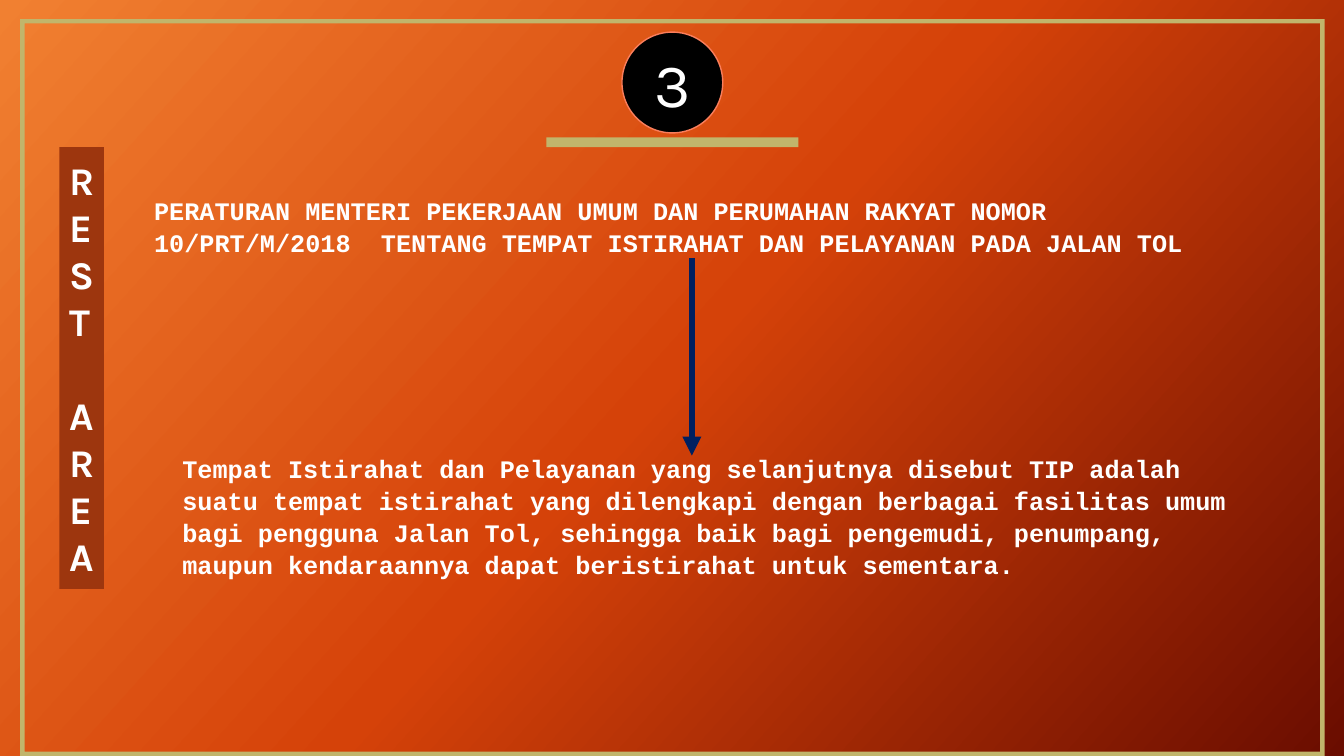
from lxml import etree
from pptx import Presentation
from pptx.dml.color import RGBColor
from pptx.enum.shapes import MSO_CONNECTOR, MSO_SHAPE
from pptx.enum.text import MSO_ANCHOR, MSO_AUTO_SIZE, PP_ALIGN
from pptx.oxml.ns import qn
from pptx.util import Cm, Pt

FRAME, RECTANGLE, OVAL = MSO_SHAPE.FRAME, MSO_SHAPE.RECTANGLE, MSO_SHAPE.OVAL
STRAIGHT = MSO_CONNECTOR.STRAIGHT
TOP, MIDDLE = MSO_ANCHOR.TOP, MSO_ANCHOR.MIDDLE
LEFT, CENTER = PP_ALIGN.LEFT, PP_ALIGN.CENTER
NO_AUTOFIT = MSO_AUTO_SIZE.NONE

COLORS = {
    "orange": "F18031",
    "red": "D54209",
    "maroon": "6A0D00",
    "gold": "C1B56B",
    "black": "000000",
    "coral": "FA7E5C",
    "white": "FFFFFF",
    "navy": "002060",
    "rust": "9D360E",
}
HEADING_FONT, TEXT_FONT = "Karla", "Courier New"
REGULATION = (
    "PERATURAN MENTERI PEKERJAAN UMUM DAN PERUMAHAN RAKYAT NOMOR "
    "10/PRT/M/2018  TENTANG TEMPAT ISTIRAHAT DAN PELAYANAN PADA JALAN TOL"
)
DEFINITION = (
    "Tempat Istirahat dan Pelayanan yang selanjutnya disebut TIP adalah "
    "suatu tempat istirahat yang dilengkapi dengan berbagai fasilitas umum "
    "bagi pengguna Jalan Tol, sehingga baik bagi pengemudi, penumpang, "
    "maupun kendaraannya dapat beristirahat untuk sementara."
)


def color(name):
    """Return the named palette colour."""
    return RGBColor.from_string(COLORS[name])


def paint_background(slide):
    """Fill the slide with a diagonal three-colour gradient."""
    fill = slide.background.fill
    fill.gradient()
    fill.gradient_angle = 318
    stop_list = slide.background._cSld.find(".//" + qn("a:gsLst"))
    for stop in list(stop_list):
        stop_list.remove(stop)
    for position, name in ((0, "orange"), (50, "red"), (100, "maroon")):
        stop = etree.SubElement(stop_list, qn("a:gs"), pos=str(position * 1000))
        etree.SubElement(stop, qn("a:srgbClr"), val=COLORS[name])


def add_block(slide, kind, box, fill):
    """Add a flat, unlined preset shape in the given box."""
    shape = slide.shapes.add_shape(kind, *map(Cm, box))
    shape.shadow.inherit = False
    shape.fill.solid()
    shape.fill.fore_color.rgb = color(fill)
    shape.line.fill.background()
    return shape


def format_paragraph(paragraph, font, size, bold, alignment):
    """Set the alignment and white font of a paragraph."""
    paragraph.alignment = alignment
    paragraph.font.name = font
    paragraph.font.size = Pt(size)
    paragraph.font.bold = bold
    paragraph.font.color.rgb = color("white")


def add_number_badge(slide, box, number):
    """Draw the numbered circle over a gold bar."""
    left, top, width, height = box
    diameter = 2.54
    add_block(slide, RECTANGLE, (left, top + height - 0.25, width, 0.25), "gold")
    circle_left = left + (width - diameter) / 2
    circle = add_block(slide, OVAL, (circle_left, top, diameter, diameter), "black")
    circle.line.color.rgb = color("coral")
    circle.line.width = Pt(1)
    frame = circle.text_frame
    frame.text = number
    frame.vertical_anchor = MIDDLE
    format_paragraph(frame.paragraphs[0], HEADING_FONT, 44, False, CENTER)


def add_side_label(slide, box, words):
    """Stack the letters of the words in a narrow column."""
    label = add_block(slide, RECTANGLE, box, "rust")
    frame = label.text_frame
    frame.word_wrap = True
    frame.vertical_anchor = MIDDLE
    frame.text = "\n".join(words)
    for index, paragraph in enumerate(frame.paragraphs):
        format_paragraph(paragraph, HEADING_FONT, 28, True, LEFT)
        paragraph.space_before = Pt(33.6 if index else 0)


def fill_placeholder(placeholder, box, text):
    """Move a placeholder and give it plain bold text."""
    placeholder.left, placeholder.top, placeholder.width, placeholder.height = map(Cm, box)
    frame = placeholder.text_frame
    frame.text = text
    frame.word_wrap = True
    frame.auto_size = NO_AUTOFIT
    frame.vertical_anchor = TOP
    frame.margin_top = Cm(0.18)
    paragraph = frame.paragraphs[0]
    properties = paragraph._p.get_or_add_pPr()
    properties.set("marL", "0")
    properties.set("indent", "0")
    etree.SubElement(properties, qn("a:buNone"))
    paragraph.space_before = Pt(0)
    paragraph.line_spacing = 1.06
    format_paragraph(paragraph, TEXT_FONT, 18, True, LEFT)


def add_down_arrow(slide, source, length):
    """Draw an arrow down from the bottom middle of the source shape."""
    x = source.left + source.width // 2
    y = source.top + source.height
    arrow = slide.shapes.add_connector(STRAIGHT, x, y, x, y + Cm(length))
    arrow.begin_connect(source, 2)
    arrow.line.color.rgb = color("navy")
    arrow.line.width = Pt(4.5)
    etree.SubElement(arrow.line._get_or_add_ln(), qn("a:tailEnd"), type="triangle")
    etree.SubElement(arrow._element.spPr, qn("a:effectLst"))


def build_rest_area_slide(presentation):
    """Build the slide on the rest area regulation."""
    slide = presentation.slides.add_slide(presentation.slide_layouts[1])
    paint_background(slide)
    border = add_block(slide, FRAME, (0.51, 0.48, 32.87, 18.57), "gold")
    border.adjustments[0] = 0.006
    add_number_badge(slide, (13.77, 0.81, 6.35, 2.9), "3")
    title, body = slide.placeholders
    fill_placeholder(title, (3.63, 4.7, 27.61, 1.8), REGULATION)
    fill_placeholder(body, (4.34, 11.2, 27.33, 3.33), DEFINITION)
    add_down_arrow(slide, title, 4.98)
    add_side_label(slide, (1.5, 3.71, 1.12, 11.13), ("REST", "AREA"))


def main():
    """Create and save the presentation."""
    presentation = Presentation()
    presentation.slide_width, presentation.slide_height = Cm(33.87), Cm(19.05)
    build_rest_area_slide(presentation)
    presentation.save("out.pptx")


if __name__ == "__main__":
    main()
